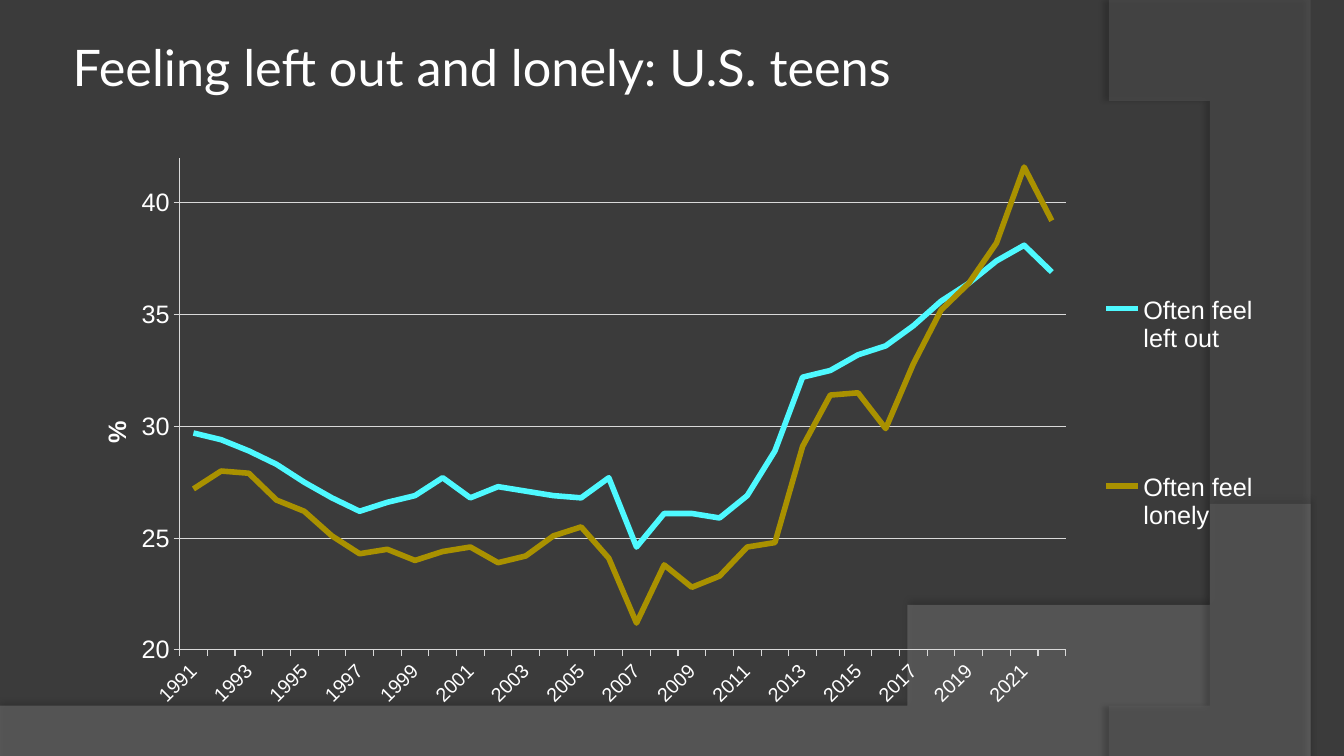
from dataclasses import dataclass

from lxml.etree import SubElement
from pptx import Presentation
from pptx.chart.data import CategoryChartData
from pptx.dml.color import RGBColor
from pptx.enum.chart import XL_CHART_TYPE as ChartType
from pptx.enum.chart import XL_LEGEND_POSITION as LegendPosition
from pptx.enum.chart import XL_TICK_MARK as TickMark
from pptx.enum.text import MSO_ANCHOR as Anchor
from pptx.enum.text import PP_ALIGN as Align
from pptx.oxml import parse_xml
from pptx.oxml.ns import nsdecls, qn
from pptx.util import Inches, Pt

WIDTH, HEIGHT = 13.33, 7.5


@dataclass(frozen=True)
class Theme:
    background: str = "3B3B3B"
    swoosh: str = "7F7F7F"
    arc: str = "5E5E5E"
    text: str = "FFFFFF"
    grid: str = "D9D9D9"
    left_out: str = "4EF9FF"
    lonely: str = "A99100"
    title_font: str = "Lato"
    chart_font: str = "Arial"
    title_size: int = 36
    chart_size: int = 18
    year_size: int = 14
    series_width: float = 4
    rule_width: float = 0.75


THEME = Theme()
YEARS = range(1991, 2023)
LEFT_OUT = (
    29.7, 29.4, 28.9, 28.3, 27.5, 26.8, 26.2, 26.6, 26.9, 27.7, 26.8,
    27.3, 27.1, 26.9, 26.8, 27.7, 24.6, 26.1, 26.1, 25.9, 26.9, 28.9,
    32.2, 32.5, 33.2, 33.6, 34.5, 35.6, 36.4, 37.4, 38.1, 36.9)
LONELY = (
    27.2, 28, 27.9, 26.7, 26.2, 25.1, 24.3, 24.5, 24, 24.4, 24.6,
    23.9, 24.2, 25.1, 25.5, 24.1, 21.2, 23.8, 22.8, 23.3, 24.6, 24.8,
    29.1, 31.4, 31.5, 29.9, 32.8, 35.2, 36.4, 38.2, 41.6, 39.2)


def color(hex_code):
    return RGBColor.from_string(hex_code)


def format_font(font, size, face=THEME.chart_font, bold=False):
    font.size, font.name, font.bold = Pt(size), face, bold
    font.color.rgb = color(THEME.text)


def write_text(frame, text, align=Align.LEFT, anchor=Anchor.MIDDLE, **font_format):
    frame.word_wrap = True
    frame.vertical_anchor = anchor
    paragraph = frame.paragraphs[0]
    paragraph.alignment = align
    run = paragraph.add_run()
    run.text = text
    format_font(run.font, **font_format)


def format_line(line, hex_code, width):
    line.color.rgb = color(hex_code)
    line.width = Pt(width)


def bezier(start, control_1, control_2, end, steps=60):
    """Return points along a cubic curve, both ends included."""
    def at(t):
        weights = ((1 - t) ** 3, 3 * t * (1 - t) ** 2, 3 * t * t * (1 - t), t ** 3)
        corners = (start, control_1, control_2, end)
        return tuple(sum(w * c[axis] for w, c in zip(weights, corners))
                     for axis in (0, 1))
    return [at(step / steps) for step in range(steps + 1)]


def add_backdrop(slide, outline, fill, opacity, shadow_opacity, distance, angle):
    """Draw a translucent curved area with a soft shadow."""
    builder = slide.shapes.build_freeform(*outline[0], scale=Inches(1))
    builder.add_line_segments(outline[1:], close=True)
    area = builder.convert_to_shape()
    area.line.fill.background()
    area.fill.solid()
    area.fill.fore_color.rgb = color(fill)
    fill_color = area.fill._xPr.find(qn("a:solidFill"))[0]
    SubElement(fill_color, qn("a:alpha"), val=str(opacity * 1000))
    area._element.spPr.append(parse_xml(
        f'<a:effectLst {nsdecls("a")}><a:outerShdw blurRad="{Pt(4)}" '
        f'dist="{Pt(distance)}" dir="{angle * 60000}" rotWithShape="0">'
        f'<a:srgbClr val="000000"><a:alpha val="{shadow_opacity * 1000}"/>'
        '</a:srgbClr></a:outerShdw></a:effectLst>'))


def layout_xml(x, y, w=None, h=None, inner=False):
    """Return a manual chart layout given as shares of the chart's size."""
    target = '<c:layoutTarget val="inner"/>' if inner else ""
    modes = '<c:xMode val="edge"/><c:yMode val="edge"/>'
    sizes = "".join(f'<c:{key} val="{value}"/>'
                    for key, value in zip("xywh", (x, y, w, h)) if value is not None)
    return parse_xml(f'<c:layout {nsdecls("c")}><c:manualLayout>{target}{modes}{sizes}'
                     '</c:manualLayout></c:layout>')


def place(part, after=None, **shares):
    """Give a chart part a manual layout, following its child named after."""
    for old in part.findall(qn("c:layout")):
        part.remove(old)
    index = 0 if after is None else part.index(part.find(qn(after))) + 1
    part.insert(index, layout_xml(**shares))


def format_axis(axis, size):
    axis.major_tick_mark, axis.minor_tick_mark = TickMark.OUTSIDE, TickMark.NONE
    format_font(axis.tick_labels.font, size)
    format_line(axis.format.line, THEME.grid, THEME.rule_width)


def format_years(axis):
    format_axis(axis, THEME.year_size)
    axis.has_major_gridlines = False
    element = axis._element
    element.find(qn("c:txPr")).find(qn("a:bodyPr")).set("rot", str(-45 * 60000))
    no_multi_level = element.find(qn("c:noMultiLvlLbl"))
    for tag, step in (("tickLblSkip", 2), ("tickMarkSkip", 1)):
        skip = parse_xml(f'<c:{tag} {nsdecls("c")} val="{step}"/>')
        no_multi_level.addprevious(skip)


def format_percent(axis):
    format_axis(axis, THEME.chart_size)
    axis.minimum_scale, axis.maximum_scale, axis.major_unit = 20, 42, 5
    axis.has_major_gridlines = True
    format_line(axis.major_gridlines.format.line, THEME.grid, THEME.rule_width)
    write_text(axis.axis_title.text_frame, "%", align=Align.CENTER,
               size=THEME.chart_size, bold=True)
    title = axis._element.find(qn("c:title"))
    body = title.find(".//" + qn("a:bodyPr"))
    body.set("rot", str(-90 * 60000))
    body.set("vert", "horz")
    place(title, after="c:tx", x=0.01, y=0.48)


def add_trend_chart(slide):
    data = CategoryChartData()
    data.categories = [str(year) for year in YEARS]
    data.add_series("Often feel left out", LEFT_OUT)
    data.add_series("Often feel lonely", LONELY)
    box = [Inches(length) for length in (0.83, 1.33, 11.75, 5.83)]
    chart = slide.shapes.add_chart(ChartType.LINE, *box, data).chart
    format_font(chart.font, THEME.chart_size)
    chart.has_title = False
    plot = chart.plots[0]
    plot.vary_by_categories = False
    for series, hex_code in zip(plot.series, (THEME.left_out, THEME.lonely)):
        series.smooth = False
        format_line(series.format.line, hex_code, THEME.series_width)
    format_years(chart.category_axis)
    format_percent(chart.value_axis)
    chart.has_legend = True
    legend = chart.legend
    legend.position, legend.include_in_layout = LegendPosition.RIGHT, False
    format_font(legend.font, THEME.chart_size)
    place(legend._element, after="c:legendPos", x=0.85, y=0.07, w=0.15, h=0.81)
    plot_area = chart._chartSpace.chart.plotArea
    place(plot_area, x=0.081, y=0.041, w=0.748, h=0.837, inner=True)


def add_title(slide, text):
    title = slide.shapes.title
    title.left, title.top = Inches(0.67), Inches(0.33)
    title.width, title.height = Inches(10.58), Inches(0.65)
    frame = title.text_frame
    frame.margin_left = frame.margin_right = Inches(0.05)
    frame.margin_top = frame.margin_bottom = Inches(0.05)
    write_text(frame, text, size=THEME.title_size, face=THEME.title_font)


def main():
    deck = Presentation()
    deck.slide_width, deck.slide_height = Inches(WIDTH), Inches(HEIGHT)
    slide = deck.slides.add_slide(deck.slide_layouts[5])
    slide.background.fill.solid()
    slide.background.fill.fore_color.rgb = color(THEME.background)

    swoosh = bezier((WIDTH, 5.2), (7.45, 7.29), (5.21, 7.19), (0, 7.05))
    add_backdrop(slide, [(0, HEIGHT), (WIDTH, HEIGHT), *swoosh], THEME.swoosh,
                 opacity=45, shadow_opacity=35, distance=3.5, angle=270)
    arc = bezier((10.95, HEIGHT), (12.46, 6.19), (13.57, 3), (10.67, 0))
    add_backdrop(slide, [(WIDTH, 0.02), (WIDTH, HEIGHT), *arc], THEME.arc,
                 opacity=40, shadow_opacity=45, distance=4, angle=180)
    add_title(slide, "Feeling left out and lonely: U.S. teens")
    add_trend_chart(slide)
    deck.save("out.pptx")


if __name__ == "__main__":
    main()
